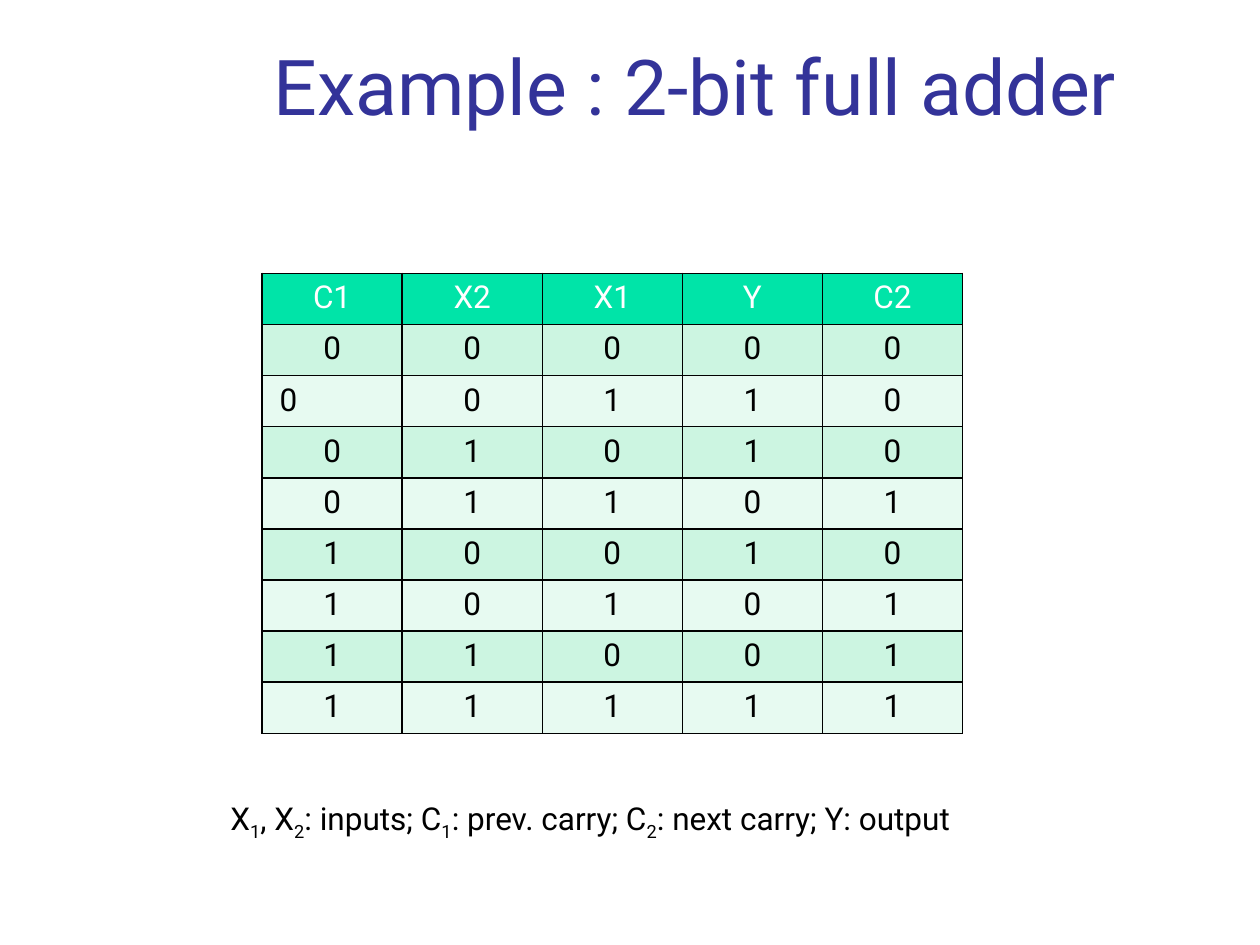
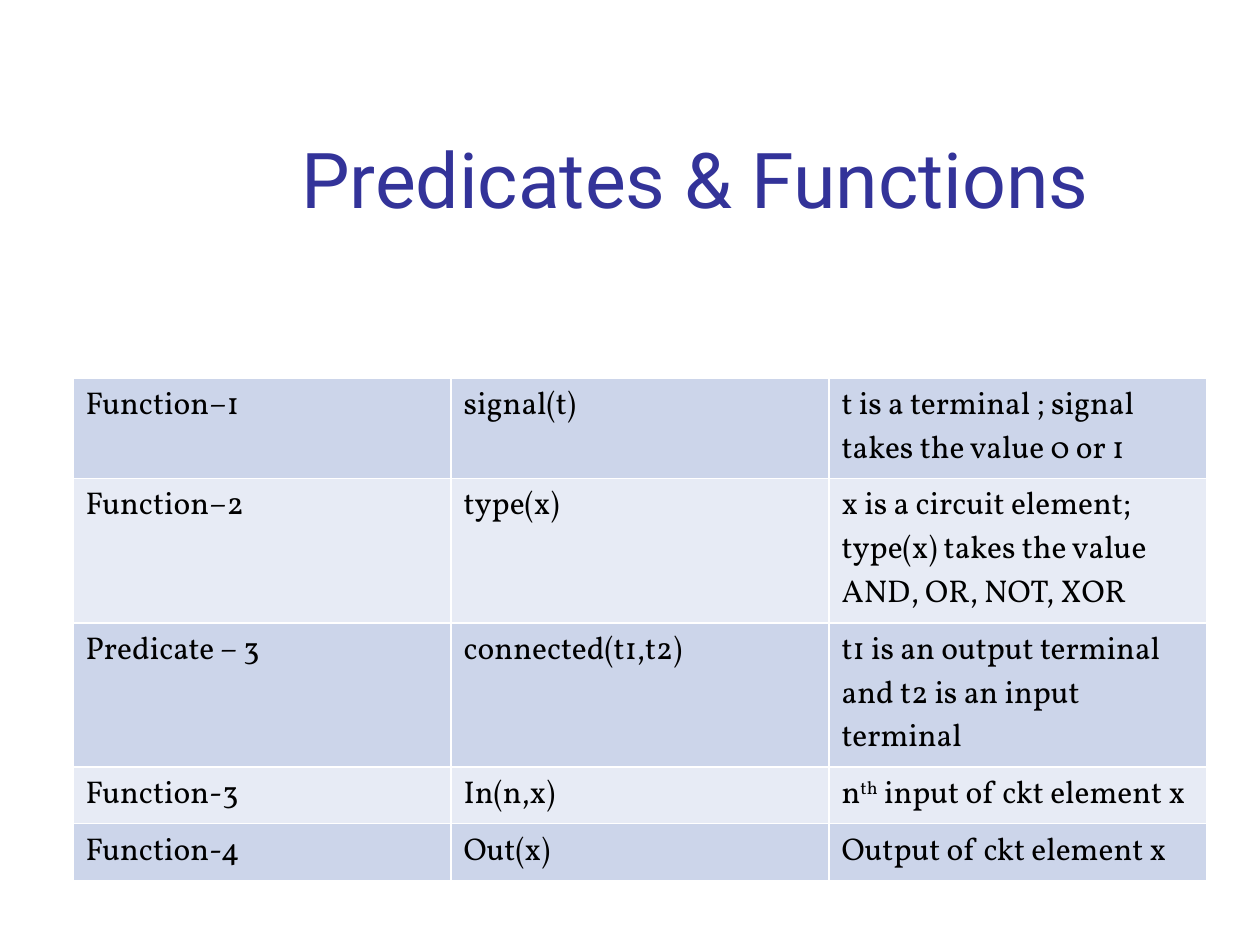
from lxml import etree
from pptx import Presentation
from pptx.dml.color import RGBColor
from pptx.enum import text
from pptx.oxml import ns
from pptx.util import Inches, Pt

COLORS = {
    "title": "333399",
    "ink": "000000",
    "paper": "FFFFFF",
    "adder_head": "00E4A8",
    "adder_odd": "CCF5E1",
    "adder_even": "E7FAF1",
    "logic_odd": "CCD5EA",
    "logic_even": "E7EBF5",
}
SANS, SERIF = "Roboto", "Vollkorn"
LEFT, CENTER = text.PP_ALIGN.LEFT, text.PP_ALIGN.CENTER
TITLE_BOX = (1.26, 0.23, 8.52, 1.6)

TRUTH_HEAD = ("C1", "X2", "X1", "Y", "C2")
CARRY_LEGEND = ("X", "1", ", X", "2", ": inputs; C", "1", ": prev. carry; C", "2",
                ": next carry; Y: output")
LOGIC_ROWS = [
    ("Function–1", "signal(t)", "t is a terminal ; signal takes the value 0 or 1"),
    ("Function–2", "type(x)",
     "x is a circuit element; type(x) takes the value AND, OR, NOT, XOR"),
    ("Predicate – 3", "connected(t1,t2)",
     "t1 is an output terminal and t2 is an input terminal"),
    ("Function-3", "In(n,x)", ("n", "th", " input of ckt element x")),
    ("Function-4", "Out(x)", "Output of ckt element x"),
]


def write(frame, content, size=18, font=SANS, color="ink", align=LEFT, shift=0):
    pieces = (content,) if isinstance(content, str) else content
    paragraph = frame.paragraphs[0]
    paragraph.alignment = align
    for index, piece in enumerate(pieces):
        run = paragraph.add_run()
        run.text = piece
        run.font.size = Pt(size)
        run.font.name = font
        run.font.color.rgb = RGBColor.from_string(COLORS[color])
        if index % 2:
            run._r.get_or_add_rPr().set("baseline", str(shift * 1000))


def draw_borders(cell, color):
    properties = cell._tc.get_or_add_tcPr()
    for index, side in enumerate(("lnL", "lnR", "lnT", "lnB")):
        line = etree.Element(ns.qn(f"a:{side}"), w=str(Pt(1)))
        fill = etree.SubElement(line, ns.qn("a:solidFill"))
        etree.SubElement(fill, ns.qn("a:srgbClr"), val=COLORS[color])
        properties.insert(index, line)


def add_titled_slide(deck, heading, bottom_inset=0.05):
    slide = deck.slides.add_slide(deck.slide_layouts[5])
    title = slide.shapes.title
    title.left, title.top, title.width, title.height = map(Inches, TITLE_BOX)
    frame = title.text_frame
    frame.auto_size = text.MSO_AUTO_SIZE.NONE
    frame.vertical_anchor = text.MSO_ANCHOR.BOTTOM
    frame.margin_bottom = Inches(bottom_inset)
    write(frame, heading, size=44, color="title", align=CENTER)
    return slide


def add_grid(slide, box, rows, row_height, fills, border, head_fill=None, **style):
    graphic = slide.shapes.add_table(len(rows), len(rows[0]), *map(Inches, box))
    grid = graphic.table
    grid.first_row = grid.horz_banding = False
    for r, values in enumerate(rows):
        grid.rows[r].height = Inches(row_height)
        is_head = head_fill is not None and r == 0
        band = head_fill if is_head else fills[(r - bool(head_fill)) % 2]
        for c, value in enumerate(values):
            cell = grid.cell(r, c)
            cell.fill.solid()
            cell.fill.fore_color.rgb = RGBColor.from_string(COLORS[band])
            draw_borders(cell, border)
            write(cell.text_frame, value, color="paper" if is_head else "ink", **style)
    graphic.height = Inches(box[3])
    return grid


def add_legend(slide, box, content):
    frame = slide.shapes.add_textbox(*map(Inches, box)).text_frame
    frame.word_wrap = True
    write(frame, content, shift=-25)


def truth_rows():
    rows = [TRUTH_HEAD]
    for number in range(8):
        bits = [number >> place & 1 for place in (2, 1, 0)]
        total = sum(bits)
        rows.append([str(bit) for bit in (*bits, total % 2, total // 2)])
    return rows


def build_adder(deck):
    slide = add_titled_slide(deck, "Example : 2-bit full adder", bottom_inset=0.79)
    truth = add_grid(slide, (2.08, 2.17, 5.56, 3.65), truth_rows(), 3.65 / 9,
                     ("adder_odd", "adder_even"), "ink", head_fill="adder_head",
                     align=CENTER)
    shifted_zero = truth.cell(2, 0)
    shifted_zero.margin_left = Inches(0.14)
    shifted_zero.text_frame.paragraphs[0].alignment = LEFT
    add_legend(slide, (1.73, 6.29, 6.2, 0.4), CARRY_LEGEND)


def build_predicates(deck):
    slide = add_titled_slide(deck, "Predicates & Functions")
    add_grid(slide, (0.58, 3, 9, 3.51), LOGIC_ROWS, 0.41,
             ("logic_odd", "logic_even"), "paper", font=SERIF, shift=30)


def main():
    deck = Presentation()
    deck.slide_width, deck.slide_height = Inches(10), Inches(7.5)
    build_adder(deck)
    build_predicates(deck)
    deck.save("out.pptx")


if __name__ == "__main__":
    main()
